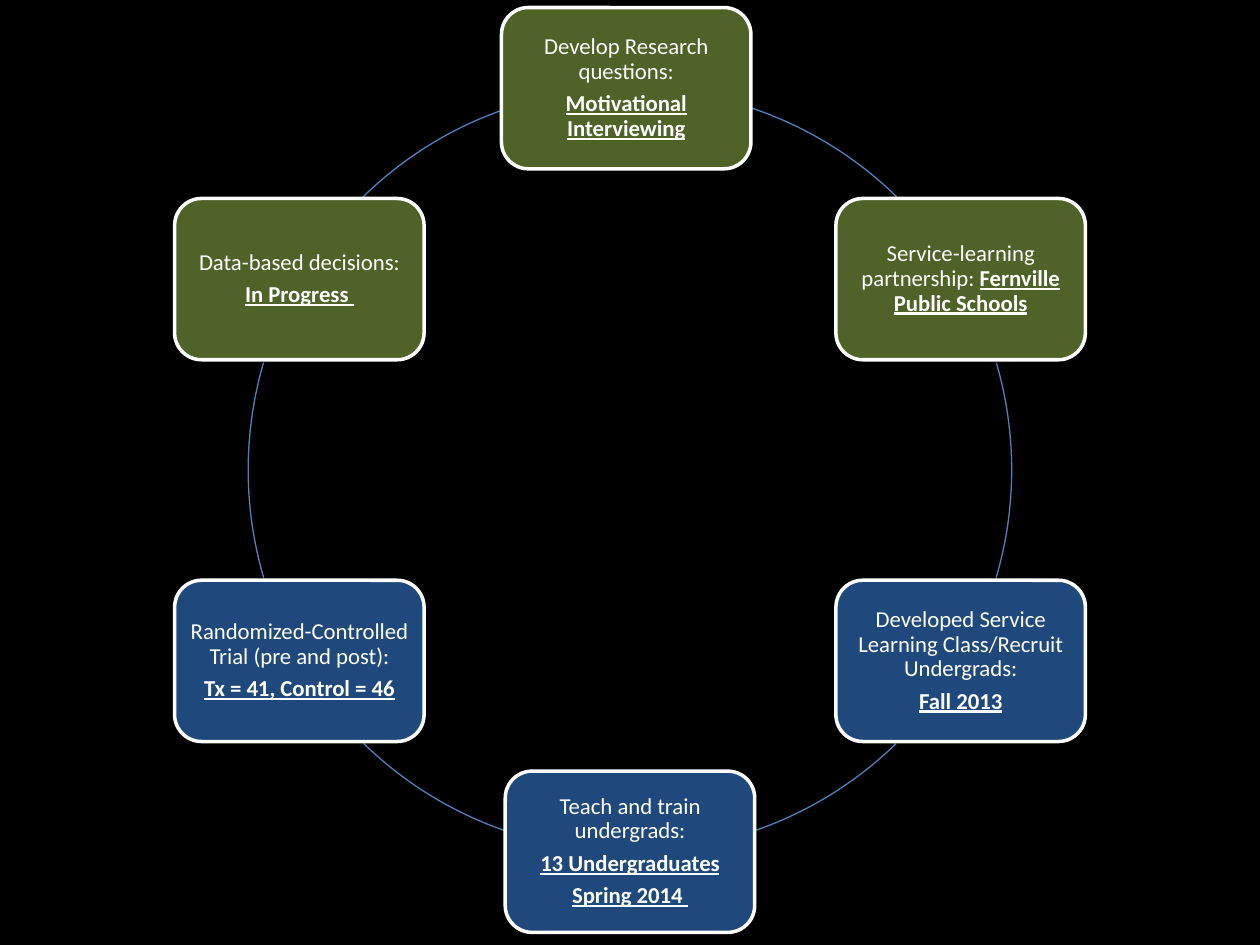
from dataclasses import dataclass
from math import cos, radians, sin

from pptx import Presentation
from pptx.dml.color import RGBColor
from pptx.enum.shapes import MSO_SHAPE
from pptx.enum.text import MSO_ANCHOR, PP_ALIGN
from pptx.util import Inches, Pt


@dataclass(frozen=True)
class Theme:
    background: str = "000000"
    text: str = "FFFFFF"
    ring: str = "4F81BD"
    green: str = "4F6228"
    blue: str = "1F497D"
    font: str = "Calibri"
    text_size: float = 13
    paragraph_gap: float = 4.5
    border_width: float = 2
    ring_width: float = 0.75


THEME = Theme()
SLIDE_WIDTH, SLIDE_HEIGHT = 10, 7.5

# The cycle: center and sizes as shares of the slide
CENTER_X, CENTER_Y = 0.5, 3.73 / SLIDE_HEIGHT
RADIUS = 3.03 / SLIDE_WIDTH
BOX_WIDTH, BOX_HEIGHT = 1.98 / SLIDE_WIDTH, 1.28 / SLIDE_HEIGHT
ASPECT = SLIDE_WIDTH / SLIDE_HEIGHT
TOP_BOX_SHIFT = -0.03 / SLIDE_WIDTH

# Each stage: fill, then paragraphs of (words, is_highlighted) spans
STAGES = [
    (THEME.green, [[("Develop Research questions:", False)],
                   [("Motivational Interviewing", True)]]),
    (THEME.green, [[("Service-learning partnership: ", False),
                    ("Fernville Public Schools", True)]]),
    (THEME.blue, [[("Developed Service Learning Class/Recruit Undergrads:", False)],
                  [("Fall 2013", True)]]),
    (THEME.blue, [[("Teach and train undergrads:", False)],
                  [("13 Undergraduates", True)],
                  [("Spring 2014 ", True)]]),
    (THEME.blue, [[("Randomized-Controlled Trial (pre and post):", False)],
                  [("Tx = 41, Control = 46", True)]]),
    (THEME.green, [[("Data-based decisions:", False)],
                   [("In Progress ", True)]]),
]

# Visible ring between neighboring boxes, in degrees clockwise from the right
RING_SPANS = [(288.7, 314.3), (343.7, 16.4), (45.8, 70.9),
              (109.1, 134.2), (163.6, 196.3), (225.5, 250.1)]


class SlideBuilder:
    def __init__(self, deck, theme):
        self.theme = theme
        self.width, self.height = deck.slide_width, deck.slide_height
        self.slide = deck.slides.add_slide(deck.slide_layouts[6])
        fill = self.slide.background.fill
        fill.solid()
        fill.fore_color.rgb = RGBColor.from_string(theme.background)

    def shape(self, kind, center_x, center_y, width, height, line, line_width):
        """Add a preset shape around a center, given in shares of the slide."""
        shape = self.slide.shapes.add_shape(
            kind,
            round((center_x - width / 2) * self.width),
            round((center_y - height / 2) * self.height),
            round(width * self.width),
            round(height * self.height),
        )
        shape.shadow.inherit = False
        shape.line.color.rgb = RGBColor.from_string(line)
        shape.line.width = Pt(line_width)
        return shape

    def ring_arc(self, start, end):
        arc = self.shape(MSO_SHAPE.ARC, CENTER_X, CENTER_Y,
                         2 * RADIUS, 2 * RADIUS * ASPECT,
                         self.theme.ring, self.theme.ring_width)
        arc.fill.background()
        # Angles are stored in 60000ths, adjustments in 100000ths
        for index, angle in enumerate((start, end)):
            arc.adjustments[index] = angle * 0.6

    def stage_box(self, center_x, center_y, color, paragraphs):
        box = self.shape(MSO_SHAPE.ROUNDED_RECTANGLE, center_x, center_y,
                         BOX_WIDTH, BOX_HEIGHT,
                         self.theme.text, self.theme.border_width)
        box.fill.solid()
        box.fill.fore_color.rgb = RGBColor.from_string(color)
        frame = box.text_frame
        frame.word_wrap = True
        frame.vertical_anchor = MSO_ANCHOR.MIDDLE
        frame.margin_left = frame.margin_right = Inches(0.05)
        frame.margin_top = frame.margin_bottom = Inches(0.05)
        for index, spans in enumerate(paragraphs):
            para = frame.add_paragraph() if index else frame.paragraphs[0]
            self.fill_paragraph(para, spans)

    def fill_paragraph(self, para, spans):
        para.alignment = PP_ALIGN.CENTER
        para.line_spacing = 0.9
        para.space_after = Pt(self.theme.paragraph_gap)
        para.font.name = self.theme.font
        para.font.size = Pt(self.theme.text_size)
        para.font.color.rgb = RGBColor.from_string(self.theme.text)
        for words, highlighted in spans:
            span = para.add_run()
            span.text = words
            if highlighted:
                span.font.bold = span.font.underline = True


def main():
    deck = Presentation()
    deck.slide_width, deck.slide_height = Inches(SLIDE_WIDTH), Inches(SLIDE_HEIGHT)
    builder = SlideBuilder(deck, THEME)

    # Ring segments
    for start, end in RING_SPANS:
        builder.ring_arc(start, end)

    # Stages, evenly spaced clockwise from the top
    for index, (color, paragraphs) in enumerate(STAGES):
        angle = radians(index * 360 / len(STAGES) - 90)
        shift = 0 if index else TOP_BOX_SHIFT
        builder.stage_box(CENTER_X + RADIUS * cos(angle) + shift,
                          CENTER_Y + RADIUS * ASPECT * sin(angle),
                          color, paragraphs)

    deck.save("out.pptx")


if __name__ == "__main__":
    main()
